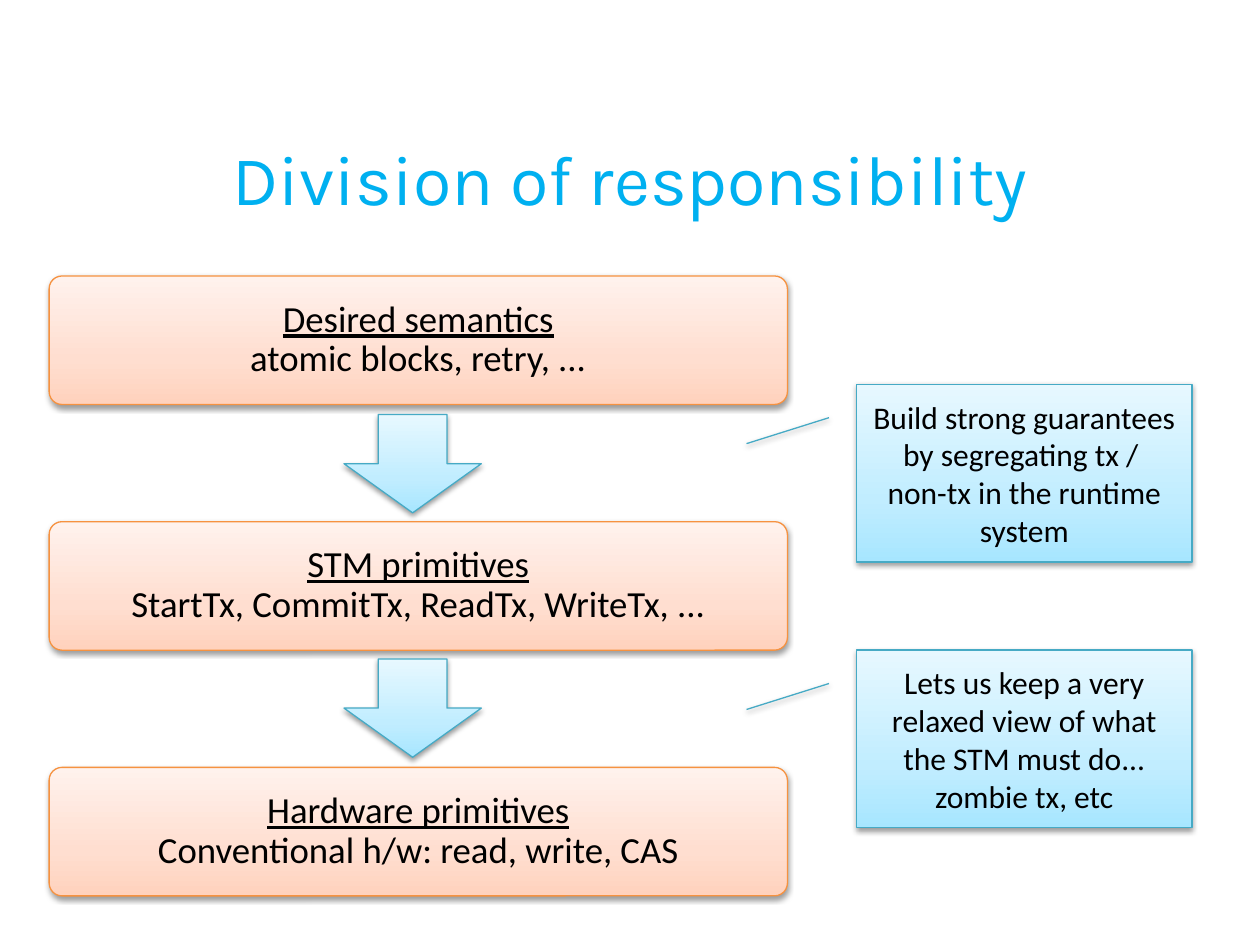
from dataclasses import dataclass

from lxml import etree
from pptx import Presentation
from pptx.dml.color import RGBColor
from pptx.enum.shapes import MSO_SHAPE
from pptx.enum.text import MSO_ANCHOR, PP_ALIGN
from pptx.oxml import parse_xml
from pptx.oxml.ns import nsdecls, qn
from pptx.util import Inches, Pt

ROUNDED_BOX = MSO_SHAPE.ROUNDED_RECTANGLE
DOWN_ARROW = MSO_SHAPE.DOWN_ARROW
CALLOUT = MSO_SHAPE.LINE_CALLOUT_1
MIDDLE = MSO_ANCHOR.MIDDLE
CENTER = PP_ALIGN.CENTER


@dataclass(frozen=True)
class Tone:
    line: str
    gradient: tuple  # from bottom to top


@dataclass(frozen=True)
class Theme:
    layer: Tone = Tone("F69240", ("FFD2BD", "FFDED0", "FFF2ED"))
    accent: Tone = Tone("46AAC5", ("A7E6FF", "C1EDFF", "E7F8FF"))
    title_color: str = "00B0F0"
    text_color: str = "000000"
    title_font: str = "Karla"
    body_font: str = "Calibri"
    title_size: int = 40
    layer_size: int = 21
    note_size: int = 18
    line_width: float = 0.75


class SlideBuilder:
    """Draws on one slide, on a grid of 100 columns by 75 rows."""

    COLUMNS, ROWS = 100, 75

    def __init__(self, presentation, theme):
        self.theme = theme
        self.slide = presentation.slides.add_slide(presentation.slide_layouts[6])
        self.column = presentation.slide_width / self.COLUMNS
        self.row = presentation.slide_height / self.ROWS

    def place(self, column, row, columns, rows):
        return (round(column * self.column), round(row * self.row),
                round(columns * self.column), round(rows * self.row))

    def style_paragraph(self, paragraph, font, size, color):
        paragraph.alignment = CENTER
        paragraph.font.name = font
        paragraph.font.size = Pt(size)
        paragraph.font.color.rgb = RGBColor.from_string(color)

    def title(self, text, *area):
        frame = self.slide.shapes.add_textbox(*self.place(*area)).text_frame
        frame.word_wrap = True
        frame.vertical_anchor = MIDDLE
        frame.text = text
        self.style_paragraph(frame.paragraphs[0], self.theme.title_font,
                             self.theme.title_size, self.theme.title_color)

    def panel(self, kind, tone, *area):
        """Add a preset shape with a vertical gradient and a soft shadow."""
        shape = self.slide.shapes.add_shape(kind, *self.place(*area))
        shape.line.color.rgb = RGBColor.from_string(tone.line)
        shape.line.width = Pt(self.theme.line_width)
        shape.fill.background()
        stops = "".join(
            f'<a:gs pos="{position}"><a:srgbClr val="{color}"/></a:gs>'
            for position, color in zip((0, 35000, 100000), tone.gradient))
        properties = shape._element.spPr
        properties.replace(properties.find(qn("a:noFill")), parse_xml(
            f'<a:gradFill {nsdecls("a")} rotWithShape="1"><a:gsLst>{stops}</a:gsLst>'
            '<a:lin ang="16200000" scaled="0"/></a:gradFill>'))
        shape.shadow.inherit = False
        shadow = etree.SubElement(
            properties.find(qn("a:effectLst")), qn("a:outerShdw"),
            blurRad=str(Pt(3.1)), dist=str(Pt(1.6)), dir="5400000", rotWithShape="0")
        color = etree.SubElement(shadow, qn("a:srgbClr"), val="000000")
        etree.SubElement(color, qn("a:alpha"), val="38000")
        shape.text_frame.word_wrap = True
        shape.text_frame.vertical_anchor = MIDDLE
        return shape

    def layer(self, heading, detail, *area):
        shape = self.panel(ROUNDED_BOX, self.theme.layer, *area)
        shape.adjustments[0] = 0.1
        paragraph = shape.text_frame.paragraphs[0]
        paragraph.line_spacing = 0.9
        heading_run = paragraph.add_run()
        heading_run.text = heading
        heading_run.font.underline = True
        paragraph.add_line_break()
        paragraph.add_run().text = detail
        self.style_paragraph(paragraph, self.theme.body_font,
                             self.theme.layer_size, self.theme.text_color)

    def arrow(self, *area):
        self.panel(DOWN_ARROW, self.theme.accent, *area)

    def note(self, text, *area):
        shape = self.panel(CALLOUT, self.theme.accent, *area)
        for index, value in enumerate((0.188, -0.083, 0.334, -0.329)):
            shape.adjustments[index] = value
        shape.text_frame.text = text
        self.style_paragraph(shape.text_frame.paragraphs[0], self.theme.body_font,
                             self.theme.note_size, self.theme.text_color)


LAYERS = (
    ("Desired semantics", "atomic blocks, retry, ..."),
    ("STM primitives", "StartTx, CommitTx, ReadTx, WriteTx, ..."),
    ("Hardware primitives", "Conventional h/w: read, write, CAS"),
)
NOTES = (
    "Build strong guarantees by segregating tx / \vnon-tx in the runtime system",
    "Lets us keep a very relaxed view of what the STM must do... zombie tx, etc",
)
LAYER_TOP, LAYER_PITCH = 21.9, 19.5
ARROW_TOP, ARROW_PITCH = 32.9, 19.4
NOTE_TOP, NOTE_PITCH = 30.5, 21.1


def main():
    presentation = Presentation()
    presentation.slide_width = Inches(10)
    presentation.slide_height = Inches(7.5)
    builder = SlideBuilder(presentation, Theme())

    builder.title("Division of responsibility", 5, 7.8, 90, 12.5)

    # Stack of layers
    for index, (heading, detail) in enumerate(LAYERS):
        builder.layer(heading, detail, 3.9, LAYER_TOP + index * LAYER_PITCH, 58.6, 10.2)

    # Each gap between layers has an arrow and a note
    for index, text in enumerate(NOTES):
        builder.arrow(27.3, ARROW_TOP + index * ARROW_PITCH, 10.9, 7.8)
        builder.note(text, 68, NOTE_TOP + index * NOTE_PITCH, 26.6, 14.1)

    presentation.save("out.pptx")


if __name__ == "__main__":
    main()
